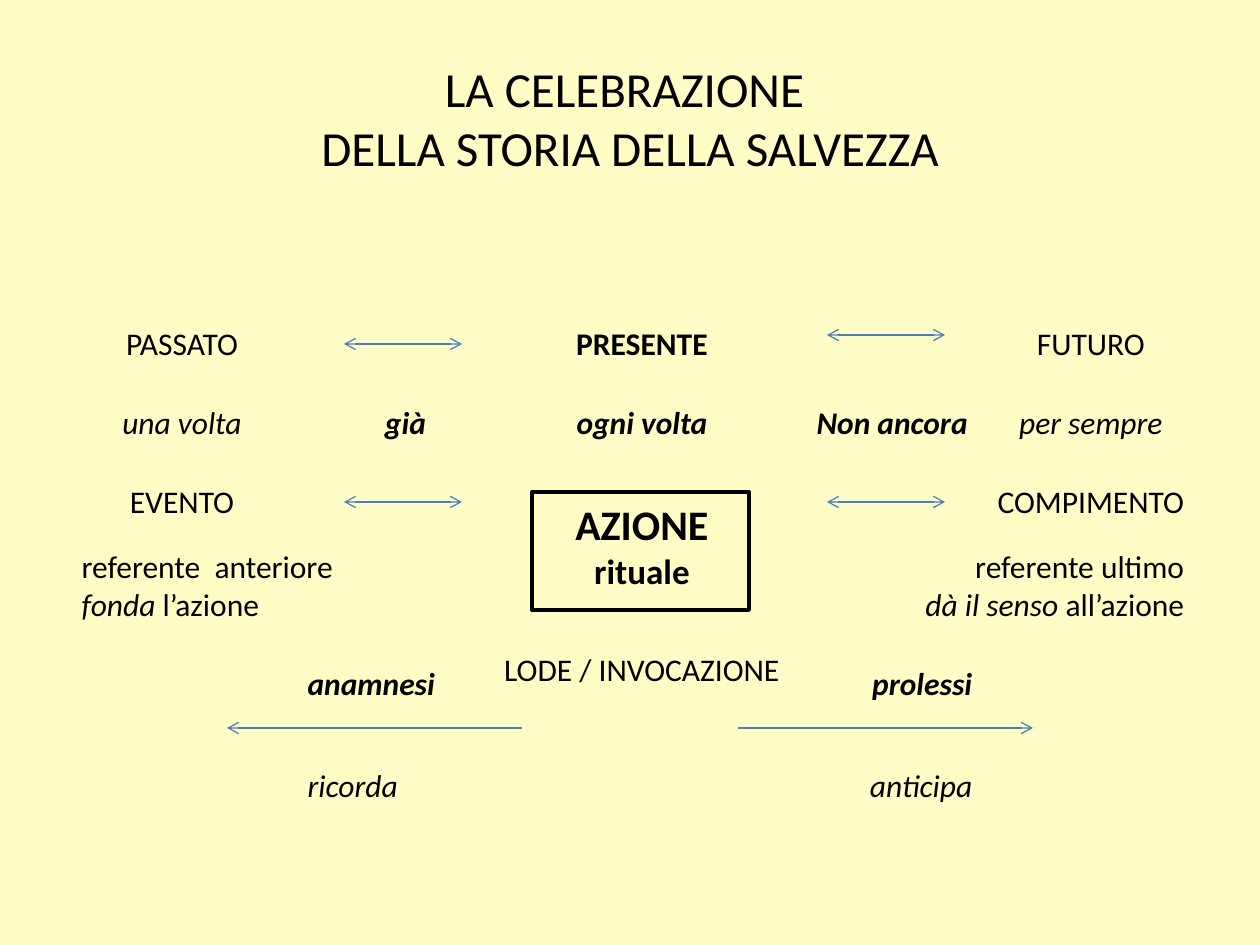
import pptx
import pptx.dml.color
import pptx.enum.shapes
import pptx.enum.text
import pptx.oxml
import pptx.oxml.ns
import pptx.util
from dataclasses import dataclass

ALIGN = pptx.enum.text.PP_ALIGN
ANCHOR = pptx.enum.text.MSO_ANCHOR
NO_GRID = "{2D5ABB26-0587-4C30-8999-92F81FD0307C}"


@dataclass(frozen=True)
class Theme:
    font: str = "Calibri"
    background: str = "FFFCC5"
    ink: str = "000000"
    arrow: str = "4B7EBC"
    title: int = 28
    strong: int = 24
    medium: int = 20
    body: int = 18


def px(n):
    return round(n * 914400 / 126)


def rgb(value):
    return pptx.dml.color.RGBColor.from_string(value)


class Deck:
    """Draws styled elements on the current slide."""

    def __init__(self, theme):
        self.t = theme
        self.prs = pptx.Presentation()
        self.prs.slide_width, self.prs.slide_height = px(1260), px(945)

    def slide(self):
        self.s = self.prs.slides.add_slide(self.prs.slide_layouts[6])
        fill = self.s.background.fill
        fill.solid()
        fill.fore_color.rgb = rgb(self.t.background)

    def set_lines(self, tf, lines, size, align=ALIGN.CENTER, style=""):
        for i, line in enumerate(lines):
            p = tf.add_paragraph() if i else tf.paragraphs[0]
            p.alignment = align
            p.font.name = self.t.font
            p.font.size = pptx.util.Pt(size[i] if isinstance(size, tuple) else size)
            p.font.color.rgb = rgb(self.t.ink)
            p.font.bold = "b" in style
            if isinstance(line, str):
                p.font.italic = "i" in style
                p.add_run().text = line
                continue
            for text, italic in line:
                r = p.add_run()
                r.text = text
                r.font.italic = italic

    def text(self, x, y, w, h, lines, size):
        tf = self.s.shapes.add_textbox(px(x), px(y), px(w), px(h)).text_frame
        tf.word_wrap = True
        tf.vertical_anchor = ANCHOR.MIDDLE
        self.set_lines(tf, lines, size)

    def table(self, x, y, cols, rows):
        frame = self.s.shapes.add_table(
            len(rows), len(cols), px(x), px(y), px(sum(cols)), px(sum(rows)))
        table = frame.table
        table.first_row = table.horz_banding = False
        table._tbl.tblPr.find(pptx.oxml.ns.qn("a:tableStyleId")).text = NO_GRID
        for col, w in zip(table.columns, cols):
            col.width = px(w)
        for row, h in zip(table.rows, rows):
            row.height = px(h)
        for cell in table.iter_cells():
            cell.fill.background()
        return table

    def cell(self, table, row, col, *lines, size=None, align=ALIGN.CENTER,
             style="", anchor=ANCHOR.MIDDLE, span=1, indent=0):
        cell = table.cell(row, col)
        if span > 1:
            cell.merge(table.cell(row, col + span - 1))
        cell.vertical_anchor = anchor
        cell.margin_left += px(indent)
        self.set_lines(cell.text_frame, lines, size or self.t.body, align, style)

    def arrow(self, x1, y1, x2, y2, both=False):
        c = self.s.shapes.add_connector(
            pptx.enum.shapes.MSO_CONNECTOR.STRAIGHT, px(x1), px(y1), px(x2), px(y2))
        c.line.color.rgb = rgb(self.t.arrow)
        c.line.width = pptx.util.Pt(0.75)
        ln = c.line._get_or_add_ln()
        ns = pptx.oxml.ns.nsdecls("a")
        for tag in ("a:headEnd", "a:tailEnd") if both else ("a:tailEnd",):
            ln.append(pptx.oxml.parse_xml(f"<{tag} {ns} type='arrow'/>"))
        c._element.spPr.append(pptx.oxml.parse_xml(f"<a:effectLst {ns}/>"))

    def frame(self, x, y, w, h):
        sp = self.s.shapes.add_shape(
            pptx.enum.shapes.MSO_SHAPE.RECTANGLE, px(x), px(y), px(w), px(h))
        sp.shadow.inherit = False
        sp.fill.background()
        sp.line.color.rgb = rgb(self.t.ink)
        sp.line.width = pptx.util.Pt(2.25)


def main():
    t = Theme()
    d = Deck(t)
    d.slide()

    table = d.table(69, 305, (226, 185, 324, 181, 212), (79, 79, 79, 88, 79, 50, 79))
    for col, head, when, role, style in (
            (0, "PASSATO", "una volta", "EVENTO", ""),
            (2, "PRESENTE", "ogni volta", None, "b"),
            (4, "FUTURO", "per sempre", "COMPIMENTO", "")):
        d.cell(table, 0, col, head, style=style)
        d.cell(table, 1, col, when, style=style + "i")
        if role:
            d.cell(table, 2, col, role)
    d.cell(table, 1, 1, "già", style="bi", indent=36)
    d.cell(table, 1, 3, "Non ancora", style="bi", align=ALIGN.LEFT)
    table.cell(2, 2).merge(table.cell(3, 2))
    d.cell(table, 2, 2, "AZIONE", "rituale", size=(t.strong, t.medium), style="b")
    d.cell(table, 3, 0, "referente  anteriore", (("fonda", True), (" l’azione", False)),
           align=ALIGN.LEFT, span=2)
    d.cell(table, 3, 3, "referente ultimo", (("dà il senso ", True), ("all’azione", False)),
           align=ALIGN.RIGHT, span=2)
    d.cell(table, 4, 2, "LODE / INVOCAZIONE")
    for col, name, verb, align in ((1, "anamnesi", "ricorda", ALIGN.LEFT),
                                   (3, "prolessi", "anticipa", ALIGN.RIGHT)):
        d.cell(table, 4, col, name, style="bi", align=align, anchor=ANCHOR.BOTTOM)
        d.cell(table, 6, col, verb, style="i", align=align, anchor=ANCHOR.TOP)

    d.text(63, 38, 1134, 158, ("LA CELEBRAZIONE ", "DELLA STORIA DELLA SALVEZZA"), t.title)
    for x, y in ((344, 344), (344, 502), (827, 335), (827, 502)):
        d.arrow(x, y, x + 118, y, both=True)
    for start, end in ((522, 227), (738, 1033)):
        d.arrow(start, 728, end, 728)
    d.frame(532, 492, 217, 118)

    d.prs.save("out.pptx")


if __name__ == "__main__":
    main()
